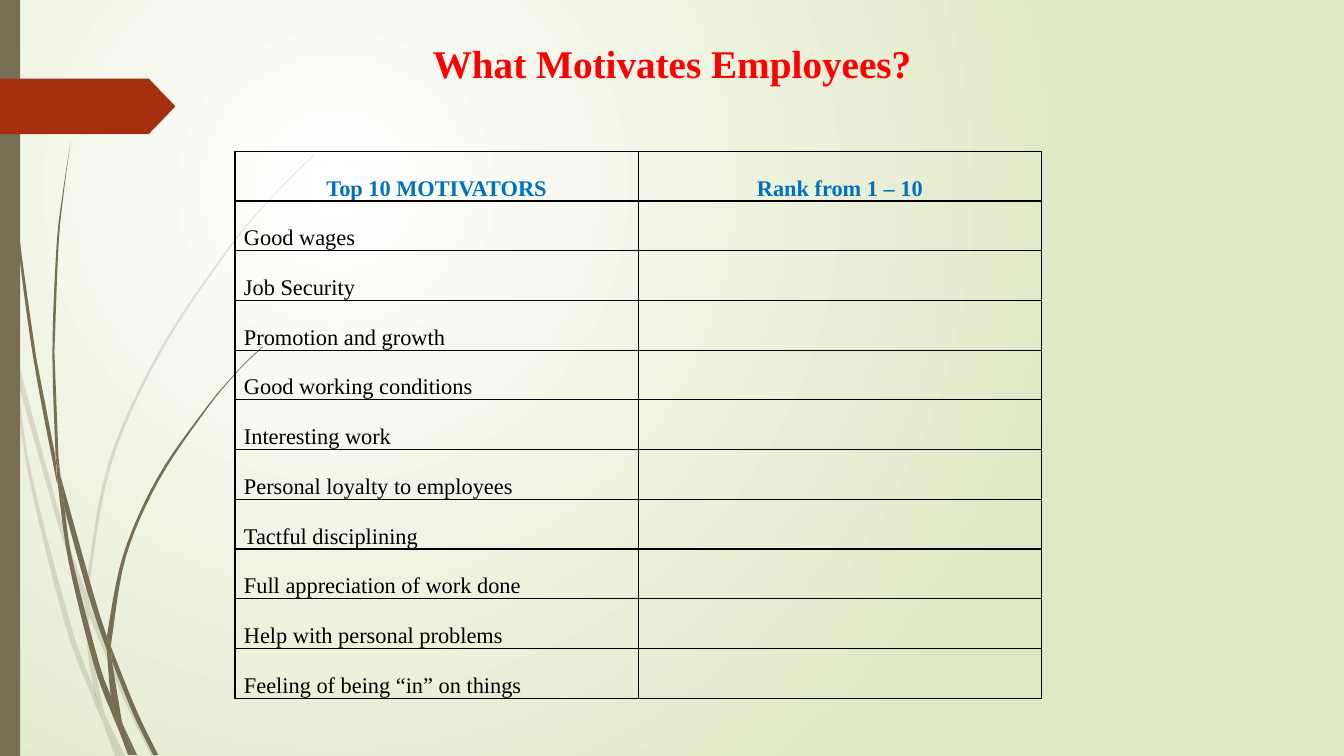
import pptx
import pptx.dml.color
import pptx.enum.shapes
import pptx.enum.text
import pptx.oxml.ns
import pptx.util
from lxml import etree

Inches = pptx.util.Inches
qn = pptx.oxml.ns.qn

MOTIVATORS = [
    "Good wages",
    "Job Security",
    "Promotion and growth",
    "Good working conditions",
    "Interesting work",
    "Personal loyalty to employees",
    "Tactful disciplining",
    "Full appreciation of work done",
    "Help with personal problems",
    "Feeling of being “in” on things",
]

FAINT_GRASS = [
    [[(0.11, 3.5), (0.09, 3.22), (0, 2.82)], [(0, 2.99), (0.1, 3.44), (0.11, 3.5)]],
    [[(0.17, 3.76), (0.58, 5.22), (0.84, 5.99)], [(0.85, 5.86), (0.62, 5.2), (0.14, 3.45)]],
    [[(0.88, 6.1), (1.23, 6.94), (1.5, 7.5)],
     [(1.55, 7.5), (1.27, 6.92), (0.92, 6.07), (0.88, 5.96)]],
    [[(1.05, 7.11), (1.19, 7.5)], [(1.24, 7.5)]],
    [[(0.11, 3.5), (0.28, 4.7), (0.65, 6.21), (0.92, 6.93), (1.01, 7.14)],
     [(0.99, 7.07), (0.93, 6.83), (0.7, 6.19), (0.31, 4.69), (0.17, 3.76), (0.11, 3.5)]],
    [[(0.84, 5.99), (0.87, 6.46), (0.93, 6.83), (0.96, 6.92), (1.05, 7.11)],
     [(1.03, 7.06), (0.91, 6.46), (0.88, 6.1)]],
    [[(0.88, 5.84), (1.1, 4.62), (1.6, 3.49), (2.29, 2.45), (2.68, 1.98), (2.9, 1.75), (3.12, 1.54)],
     [(3.12, 1.53), (2.89, 1.75), (2.68, 1.97), (2.28, 2.44), (1.58, 3.48), (1.07, 4.61), (0.85, 5.84)],
     [(0.85, 5.86), (0.88, 5.96)]],
    [[(1.01, 7.14), (1.14, 7.5)], [(1.19, 7.5)]],
    [[(0.88, 6.1), (0.88, 5.96)], [(0.85, 5.86), (0.84, 5.99)]],
    [[(0.93, 6.83), (0.99, 7.07), (1.01, 7.14), (1.19, 7.5)], [(1.05, 7.11), (0.96, 6.92)]],
]

DARK_GRASS = [
    [[(0.03, 0), (0.04, 0.48), (0.07, 1.1), (0.17, 2.33), (0.33, 3.55), (0.56, 4.77)],
     [(0.57, 4.81), (0.55, 4.53)],
     [(0.36, 3.55), (0.19, 2.32), (0.08, 1.09), (0.05, 0.48), (0.04, 0)]],
    [[(0.64, 5.05), (0.88, 5.92), (1.06, 6.45)], [(1.06, 6.31), (0.93, 5.9), (0.6, 4.72)]],
    [[(1.11, 6.56), (1.32, 7.08), (1.52, 7.49)],
     [(1.57, 7.49), (1.36, 7.06), (1.13, 6.49), (1.1, 6.41)]],
    [[(0.57, 4.77), (0.68, 5.57), (0.93, 6.59), (1.11, 7.08), (1.17, 7.22)],
     [(1.16, 7.17), (1.1, 6.91), (0.98, 6.57), (0.72, 5.56), (0.64, 5.05), (0.57, 4.77)]],
    [[(0.6, 4.72), (0.58, 4.53)],
     [(0.54, 3.49), (0.58, 2.45), (0.63, 1.93), (0.7, 1.41)],
     [(0.7, 1.41), (0.62, 1.93), (0.56, 2.45), (0.52, 3.49), (0.55, 4.49)]],
    [[(1.22, 7.19), (1.33, 7.49)], [(1.36, 7.49)]],
    [[(0.57, 4.77), (0.64, 5.05)], [(0.6, 4.72), (0.55, 4.49)]],
    [[(1.11, 6.33), (1.25, 5.52), (1.58, 4.76), (2.05, 4.06), (2.31, 3.74), (2.45, 3.59), (2.61, 3.44)],
     [(2.6, 3.44), (2.45, 3.58), (2.31, 3.73), (2.04, 4.05), (1.56, 4.74), (1.22, 5.51), (1.06, 6.31)],
     [(1.1, 6.41)]],
    [[(1.17, 7.22), (1.27, 7.49)], [(1.31, 7.49)]],
    [[(1.06, 6.45), (1.1, 6.91), (1.16, 7.06), (1.22, 7.19)], [(1.21, 7.16), (1.11, 6.56)]],
    [[(1.06, 6.45), (1.11, 6.56)], [(1.1, 6.41), (1.06, 6.31)]],
    [[(1.1, 6.91), (1.16, 7.17), (1.17, 7.22), (1.3, 7.49)], [(1.33, 7.49), (1.22, 7.19)]],
]


def color(value):
    return pptx.dml.color.RGBColor.from_string(value)


def smooth(edge, steps=6):
    padded = [edge[0], *edge, edge[-1]]
    points = [edge[0]]
    for before, start, end, after in zip(padded, padded[1:], padded[2:], padded[3:]):
        for step in range(1, steps + 1):
            t = step / steps
            points.append(tuple(
                b + (c - a) * t / 2 + (2 * a - 5 * b + 4 * c - d) * t**2 / 2
                + (3 * b - a - 3 * c + d) * t**3 / 2
                for a, b, c, d in zip(before, start, end, after)))
    return points


class SlideBuilder:
    font = "Times New Roman"
    bark = "766F54"

    def __init__(self, presentation):
        self.slide = presentation.slides.add_slide(presentation.slide_layouts[5])

    def background(self, center, edge):
        fill = self.slide.background.fill
        fill.gradient()
        for stop, value in zip(fill.gradient_stops, (center, edge)):
            stop.color.rgb = color(value)
        gradient = next(self.slide.element.iter(qn("a:gradFill")))
        gradient.remove(gradient.find(qn("a:lin")))
        circle = etree.SubElement(gradient, qn("a:path"), path="circle")
        etree.SubElement(circle, qn("a:fillToRect"), l="50000", t="50000", r="100000", b="100000")

    def paint(self, shape, value, opacity=100):
        shape.shadow.inherit = False
        shape.fill.solid()
        shape.fill.fore_color.rgb = color(value)
        shape.line.fill.background()
        if opacity < 100:
            solid = next(shape.element.spPr.iter(qn("a:srgbClr")))
            etree.SubElement(solid, qn("a:alpha"), val=str(opacity * 1000))

    def grass(self, blades, opacity=100):
        group = self.slide.shapes.add_group_shape()
        for edges in blades:
            outline = [(Inches(x), Inches(y)) for edge in edges for x, y in smooth(edge)]
            builder = group.shapes.build_freeform(*outline[0])
            builder.add_line_segments(outline[1:], close=True)
            self.paint(builder.convert_to_shape(), self.bark, opacity)

    def block(self, kind, left, top, width, height, value):
        shape = self.slide.shapes.add_shape(
            kind, Inches(left), Inches(top), Inches(width), Inches(height))
        self.paint(shape, value)
        return shape

    def set_text(self, paragraph, text, size, value, bold=False, centered=False):
        paragraph.text = text
        paragraph.font.name = self.font
        paragraph.font.size = pptx.util.Pt(size)
        paragraph.font.bold = bold
        paragraph.font.color.rgb = color(value)
        alignments = pptx.enum.text.PP_ALIGN
        paragraph.alignment = alignments.CENTER if centered else alignments.LEFT

    def title(self, text):
        title = self.slide.shapes.title
        title.left, title.top, title.width, title.height = 0, 0, Inches(13.33), Inches(0.91)
        title.text_frame.vertical_anchor = pptx.enum.text.MSO_ANCHOR.BOTTOM
        self.set_text(title.text_frame.paragraphs[0], text, 28, "FF0000", True, True)

    def border(self, cell):
        properties = cell._tc.get_or_add_tcPr()
        for position, side in enumerate(("lnL", "lnR", "lnT", "lnB")):
            line = etree.Element(qn(f"a:{side}"), w="12700")
            solid = etree.SubElement(line, qn("a:solidFill"))
            etree.SubElement(solid, qn("a:srgbClr"), val="000000")
            properties.insert(position, line)

    def table(self, rows, left, top, width, height):
        table = self.slide.shapes.add_table(
            len(rows), len(rows[0]), Inches(left), Inches(top), Inches(width), Inches(height)).table
        table.first_row = table.horz_banding = False
        for index, texts in enumerate(rows):
            header = index == 0
            for column, text in enumerate(texts):
                cell = table.cell(index, column)
                cell.fill.background()
                cell.margin_left = cell.margin_right = Inches(0.09)
                cell.margin_top = cell.margin_bottom = 0
                cell.vertical_anchor = pptx.enum.text.MSO_ANCHOR.BOTTOM
                self.set_text(cell.text_frame.paragraphs[0], text, 16,
                              "0070C0" if header else "000000", header, header)
                self.border(cell)


def main():
    presentation = pptx.Presentation()
    presentation.slide_width, presentation.slide_height = Inches(13.33), Inches(7.5)
    builder = SlideBuilder(presentation)
    shapes = pptx.enum.shapes.MSO_SHAPE
    builder.background("FFFFFF", "DFE8C4")
    builder.grass(FAINT_GRASS, opacity=20)
    builder.grass(DARK_GRASS)
    builder.block(shapes.RECTANGLE, 0, 0, 0.2, 7.5, builder.bark)
    arrow = builder.block(shapes.PENTAGON, 0, 0.78, 1.74, 0.55, "A53010")
    arrow.adjustments[0] = 0.48
    header = ("Top 10 MOTIVATORS", "Rank from 1 – 10")
    builder.table([header, *((name, "") for name in MOTIVATORS)], 2.33, 1.5, 8, 5.43)
    builder.title("What Motivates Employees?")
    presentation.save("out.pptx")


if __name__ == "__main__":
    main()
